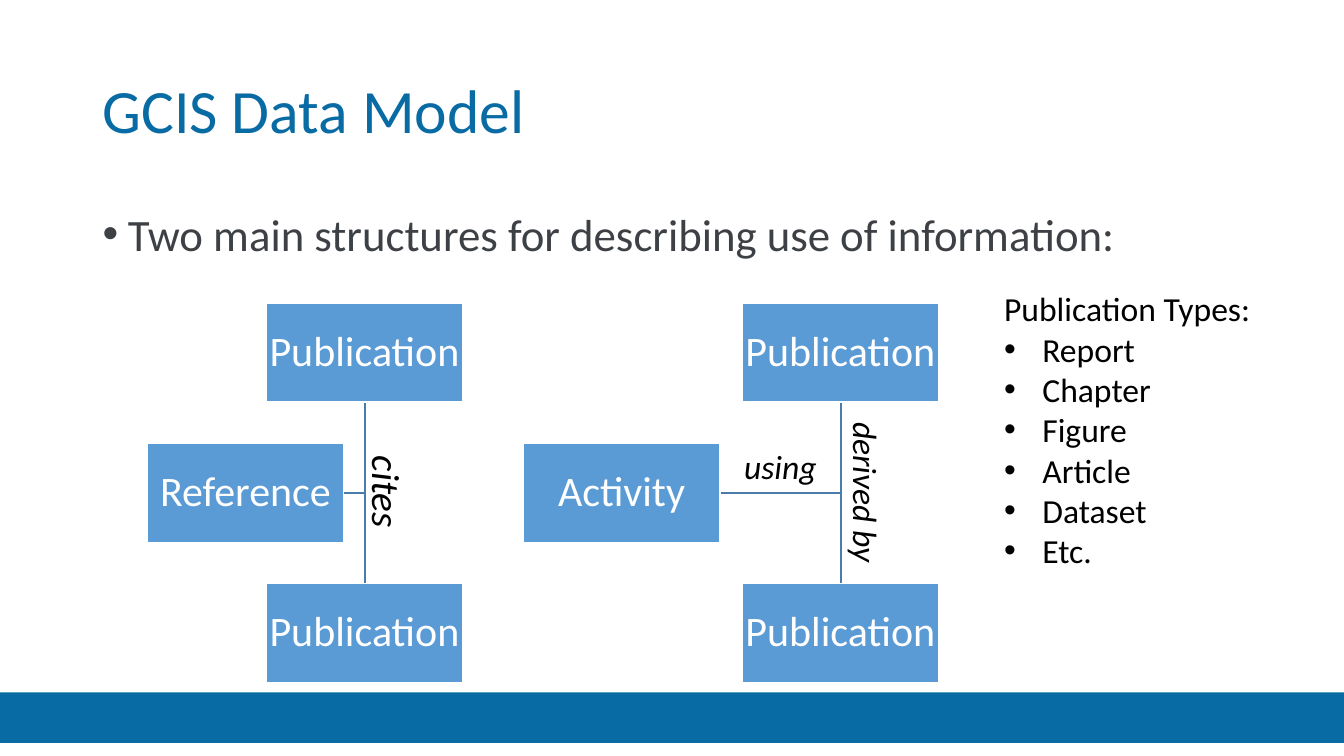
from lxml import etree
from pptx import Presentation
from pptx.dml.color import RGBColor
from pptx.enum.shapes import MSO_CONNECTOR, MSO_SHAPE
from pptx.enum.text import MSO_ANCHOR, PP_ALIGN
from pptx.oxml.ns import qn
from pptx.util import Pt

RECT = MSO_SHAPE.RECTANGLE
LINE = MSO_CONNECTOR.STRAIGHT
MID, TOP = MSO_ANCHOR.MIDDLE, MSO_ANCHOR.TOP
LEFT, MIDST = PP_ALIGN.LEFT, PP_ALIGN.CENTER
PX = 9144
hue = RGBColor.from_string


def write(shape, lines, size, color, align=LEFT, anchor=TOP, italic=False):
    frame = shape.text_frame
    frame.word_wrap = True
    frame.vertical_anchor = anchor
    frame.text = "\n".join(lines)
    for para in frame.paragraphs:
        para.alignment = align
        for run in para.runs:
            run.font.name = "Calibri"
            run.font.size = Pt(size)
            run.font.italic = italic
            run.font.color.rgb = hue(color)
    return frame


def bullet(para, indent):
    props = para._p.get_or_add_pPr()
    props.set("marL", str(indent * PX))
    props.set("indent", str(-indent * PX))
    etree.SubElement(props, qn("a:buFont")).set("typeface", "Arial")
    etree.SubElement(props, qn("a:buChar")).set("char", "•")


deck = Presentation()
deck.slide_width, deck.slide_height = 1333 * PX, 750 * PX
slide = deck.slides.add_slide(deck.slide_layouts[6])
shapes = slide.shapes

band = shapes.add_shape(RECT, 0, 687 * PX, 1333 * PX, 50 * PX)
band.shadow.inherit = False
band.fill.solid()
band.fill.fore_color.rgb = hue("096BA3")
band.line.fill.background()

title = shapes.add_textbox(92 * PX, 40 * PX, 1150 * PX, 145 * PX)
frame = write(title, ["GCIS Data Model"], 44, "096BA3", anchor=MID)
frame.paragraphs[0].line_spacing = 0.9

body = shapes.add_textbox(92 * PX, 200 * PX, 1150 * PX, 70 * PX)
lead = "Two main structures for describing use of information:"
frame = write(body, [lead], 32, "3D4044")
bullet(frame.paragraphs[0], 25)
frame.paragraphs[0].space_after = Pt(6)

WIDE, HIGH, STEP, HEAD = 195, 98, 139, 301
for left, side, name in [(264, 146, "Reference"), (736, 519, "Activity")]:
    mid = left + WIDE // 2 + 1
    row = HEAD + STEP + HIGH // 2
    for x1, y1, x2, y2 in [(mid, HEAD + HIGH, mid, HEAD + 2 * STEP),
                           (side + WIDE, row, mid, row)]:
        link = shapes.add_connector(LINE, x1 * PX, y1 * PX, x2 * PX, y2 * PX)
        link.line.color.rgb = hue("497CAB")
        link.line.width = Pt(1)
        etree.SubElement(link.element.spPr, qn("a:effectLst"))
    for i, (x, word) in enumerate([(left, "Publication"), (side, name),
                                   (left, "Publication")]):
        node = shapes.add_shape(RECT, x * PX, (HEAD + i * STEP) * PX,
                                WIDE * PX, HIGH * PX)
        node.shadow.inherit = False
        node.fill.solid()
        node.fill.fore_color.rgb = hue("5B9BD5")
        node.line.color.rgb = hue("FFFFFF")
        node.line.width = Pt(1)
        frame = write(node, [word], 30, "FFFFFF", MIDST, MID)
        frame.margin_left = frame.margin_right = 2 * PX
        frame.margin_top = frame.margin_bottom = 2 * PX
        frame.paragraphs[0].line_spacing = 0.9

for word, x, y, w, h, size, turn in [
    ("cites", 354, 429, 61, 118, 28, "vert"),
    ("derived by", 829, 403, 61, 171, 24, "vert"),
    ("using", 720, 429, 108, 66, 24, "horz"),
]:
    label = shapes.add_textbox(x * PX, y * PX, w * PX, h * PX)
    write(label, [word], size, "000000", MIDST, MID, True)
    label.element.txBody.bodyPr.set("vert", turn)

kinds = ["Publication Types:", "Report", "Chapter", "Figure", "Article",
         "Dataset", "Etc."]
types = shapes.add_textbox(986 * PX, 281 * PX, 279 * PX, 357 * PX)
frame = write(types, kinds, 24, "000000")
for para in frame.paragraphs[1:]:
    bullet(para, 38)

deck.save("out.pptx")
